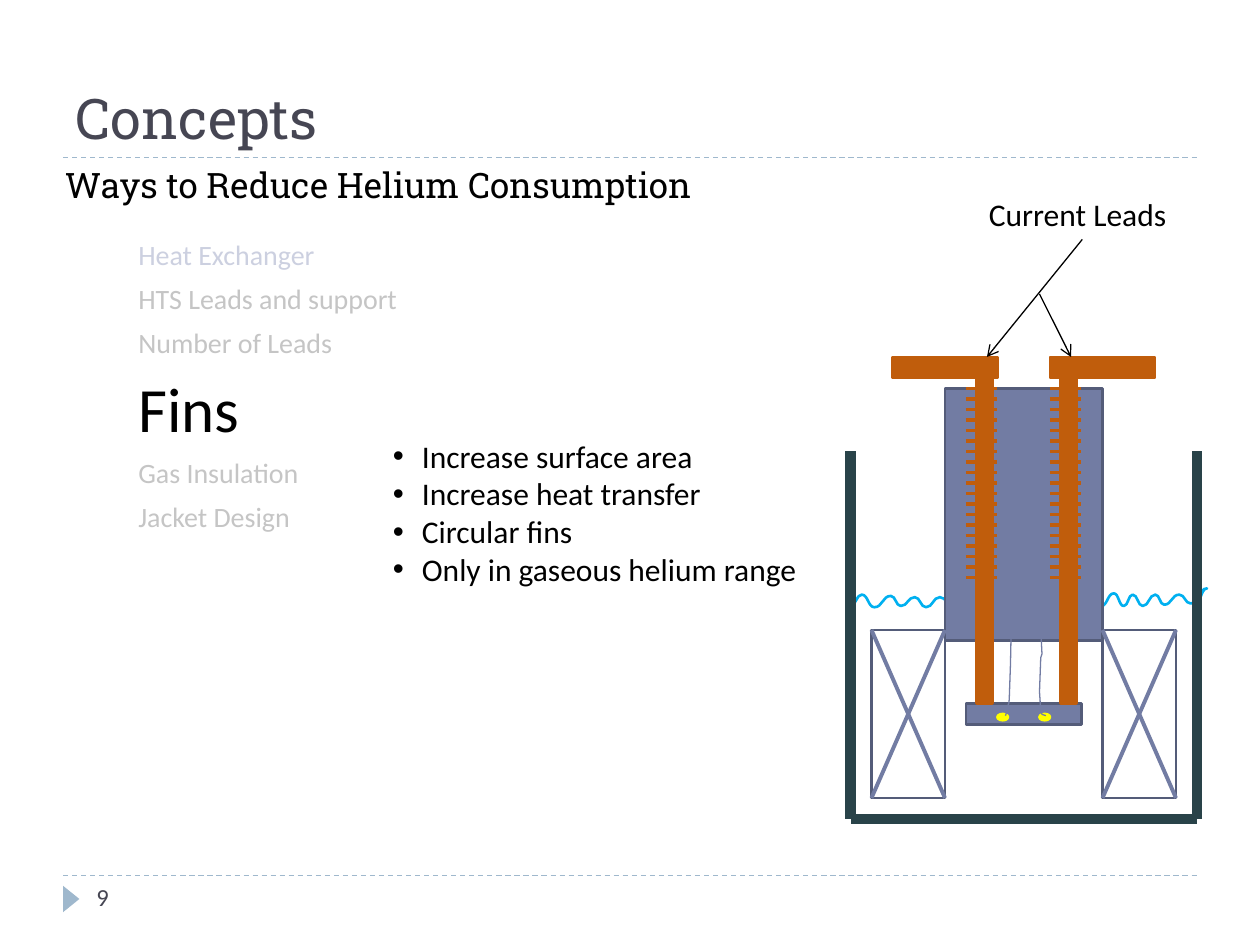
from lxml.etree import SubElement
from pptx import Presentation
from pptx.dml.color import RGBColor
from pptx.enum.dml import MSO_LINE
from pptx.enum.shapes import MSO_CONNECTOR, MSO_SHAPE
from pptx.enum.text import MSO_ANCHOR, PP_ALIGN
from pptx.oxml.ns import qn
from pptx.util import Inches, Pt

SLATE, EDGE, COPPER, WALL = "727CA3", "545C79", "C05D0C", "294349"
BLACK, INK, PALE, FADED, RULE = "000000", "464653", "CCD0E0", "C5C5C5", "9FB8CD"
YELLOW, WATER = "FFFF00", "00B0F0"

CONCEPTS = [
    ("Heat Exchanger", 16, PALE),
    ("HTS Leads and support", 16, FADED),
    ("Number of Leads", 16, FADED),
    ("Fins", 36, BLACK),
    ("Gas Insulation", 16, FADED),
    ("Jacket Design", 16, FADED),
]
FIN_NOTES = [
    "Increase surface area",
    "Increase heat transfer",
    "Circular fins",
    "Only in gaseous helium range",
]
WATER_TURNS = [
    (6.75, 4.81), (6.84, 4.72), (6.94, 4.82), (7.07, 4.73), (7.15, 4.81),
    (7.26, 4.74), (7.35, 4.82), (7.46, 4.74), (7.57, 4.82), (7.65, 4.72),
    (7.77, 4.83), (7.89, 4.7), (7.94, 4.82), (8.05, 4.73), (8.15, 4.82),
    (8.23, 4.71), (8.39, 4.83), (8.49, 4.72), (8.57, 4.81), (8.66, 4.74),
    (8.74, 4.81), (8.84, 4.71), (8.92, 4.81), (8.99, 4.72), (9.07, 4.81),
    (9.17, 4.72), (9.24, 4.8), (9.36, 4.72), (9.45, 4.79), (9.58, 4.67),
    (9.48, 4.8),
]
WIRES = [
    [(7.98, 5.68), (7.99, 5.65), (8.01, 5.55), (8.02, 5.27), (8.03, 4.77),
     (8.01, 4.66), (8.02, 4.23), (8.03, 4.2), (8.02, 4.06), (8.01, 3.84),
     (8, 3.79), (7.98, 3.67)],
    [(8.3, 5.68), (8.27, 5.67), (8.26, 5.64), (8.25, 5.49), (8.26, 5.22),
     (8.27, 5.19), (8.26, 4.99), (8.27, 4.96), (8.27, 4.57), (8.25, 4.3),
     (8.26, 4.14), (8.27, 4.11), (8.25, 3.99), (8.26, 3.67)],
]
MAGNETS = [(6.92, 5, 0.58, 1.33), (8.75, 5, 0.58, 1.33)]
LEAD_CAPS = [(7.08, 2.83, 0.83, 0.17), (8.33, 2.83, 0.83, 0.17)]
LEADS = [(7.75, 7.67), (8.42, 8.33)]
FIN_COUNT, FIN_TOP, FIN_GAP, FIN_WIDTH = 19, 37 / 12, 1 / 12, 0.25
VESSEL = [(6.75, 3.58, 6.75, 6.5), (9.5, 3.58, 9.5, 6.5),
          (6.83, 6.5, 9.5, 6.5), (7, 6.5, 6.75, 6.5)]
ARROWS = [(8.59, 1.9, 7.83, 2.83), (8.25, 2.33, 8.5, 2.83)]


def snap(value):
    twelfth = round(value * 12) / 12
    return Inches(twelfth if abs(twelfth - value) < 0.006 else value)


def rgb(value):
    return RGBColor.from_string(value)


def shape(box, fill, line=None, kind=MSO_SHAPE.RECTANGLE):
    sp = s.shapes.add_shape(kind, *map(snap, box))
    sp.shadow.inherit = False
    sp.fill.solid()
    sp.fill.fore_color.rgb = rgb(fill)
    if line:
        sp.line.color.rgb = rgb(line)
        sp.line.width = Pt(1.5)
    else:
        sp.line.fill.background()
    return sp


def connect(ends, color, width, dash=None, arrow=False):
    c = s.shapes.add_connector(MSO_CONNECTOR.STRAIGHT, *map(snap, ends))
    c.line.color.rgb = rgb(color)
    c.line.width = Pt(width)
    if dash:
        c.line.dash_style = dash
    if arrow:
        SubElement(c.line._get_or_add_ln(), qn("a:tailEnd"), type="arrow")
    SubElement(c._element.spPr, qn("a:effectLst"))


def curve(points, color, width, upright=False):
    scaled = [(Inches(x), Inches(y)) for x, y in points]
    fb = s.shapes.build_freeform(*scaled[0])
    fb.add_line_segments(scaled[1:], close=False)
    sp = fb.convert_to_shape()
    sp.shadow.inherit = False
    sp.fill.background()
    sp.line.color.rgb = rgb(color)
    sp.line.width = Pt(width)
    path = sp._element.find(".//" + qn("a:path"))
    ends = [(int(pt.get("x")), int(pt.get("y"))) for pt in path.iter(qn("a:pt"))]
    for segment in path.findall(qn("a:lnTo")):
        path.remove(segment)
    for (x0, y0), (x1, y1) in zip(ends, ends[1:]):
        xm, ym = (x0 + x1) // 2, (y0 + y1) // 2
        bends = [(x0, ym), (x1, ym)] if upright else [(xm, y0), (xm, y1)]
        bezier = SubElement(path, qn("a:cubicBezTo"))
        for x, y in bends + [(x1, y1)]:
            SubElement(bezier, qn("a:pt"), x=str(x), y=str(y))


def write(tf, lines, font="Calibri", indent=None, before=0, bullet=None, wrap=True):
    tf.word_wrap = wrap
    for i, (text, size, color) in enumerate(lines):
        p = tf.paragraphs[0] if i == 0 else tf.add_paragraph()
        p.alignment = PP_ALIGN.LEFT
        p.space_before = Pt(before)
        pPr = p._p.get_or_add_pPr()
        if indent:
            pPr.set("marL", str(Inches(indent[0])))
            pPr.set("indent", str(Inches(indent[1])))
        if bullet:
            p.level = 1
            SubElement(pPr, qn("a:buFont"), typeface="Arial")
            SubElement(pPr, qn("a:buChar"), char=bullet)
        r = p.add_run()
        r.text = text
        for name, value in {"name": font, "size": Pt(size)}.items():
            setattr(r.font, name, value)
        r.font.color.rgb = rgb(color)


def textbox(box, lines, **style):
    write(s.shapes.add_textbox(*map(snap, box)).text_frame, lines, **style)


prs = Presentation()
prs.slide_width, prs.slide_height = Inches(10), Inches(7.5)
s = prs.slides.add_slide(prs.slide_layouts[5])

title = s.shapes.title
for name, value in {"left": 0.5, "top": 0.17, "width": 9, "height": 1.08}.items():
    setattr(title, name, snap(value))
title.text_frame.vertical_anchor = MSO_ANCHOR.BOTTOM
write(title.text_frame, [("Concepts", 32, INK)], font="Roboto Slab")

for y in (6.95, 1.25):
    connect((0.5, y, 9.5, y), RULE, 0.75, dash=MSO_LINE.DASH)
shape((0.46, 7.07, 0.21, 0.13), RULE, kind=MSO_SHAPE.ISOSCELES_TRIANGLE).rotation = 90
textbox((0.67, 6.95, 2.17, 0.4), [("9", 14, INK)])

curve(WATER_TURNS, WATER, 1.5)
shape((7.5, 3.08, 1.25, 2), SLATE, EDGE)
textbox((1, 1.83, 9, 4.95), CONCEPTS, indent=(0.3, -0.3), before=6)

for cap in LEAD_CAPS:
    shape(cap, COPPER, COPPER)
shape((7.67, 5.58, 0.92, 0.17), SLATE, EDGE)
for x in (7.92, 8.25):
    shape((x, 5.67, 0.08, 0.05), YELLOW, YELLOW, MSO_SHAPE.OVAL)
for wire in WIRES:
    curve(wire, SLATE, 0.75, upright=True)

for ends in VESSEL:
    connect(ends, WALL, 6)
for x, y, w, h in MAGNETS:
    shape((x, y, w, h), "FFFFFF", EDGE)
    connect((x, y, x + w, y + h), SLATE, 2.25)
    connect((x, y + h, x + w, y), SLATE, 2.25)

textbox((0.42, 1.25, 6.75, 0.44), [("Ways to Reduce Helium Consumption", 20, BLACK)],
        font="Roboto Slab")
textbox((2.75, 3.42, 3.75, 2.83), [(note, 18, BLACK) for note in FIN_NOTES],
        indent=(0.5, -0.23), bullet="•")
textbox((7.75, 1.5, 1.68, 0.4), [("Current Leads", 18, BLACK)], wrap=False)
for ends in ARROWS:
    connect(ends, BLACK, 0.75, arrow=True)

for lead_left, fin_left in LEADS:
    shape((lead_left, 3, 0.13, 2.58), COPPER, COPPER)
    for i in range(FIN_COUNT):
        y = FIN_TOP + i * FIN_GAP
        connect((fin_left, y, fin_left + FIN_WIDTH, y), COPPER, 2.25)

prs.save("out.pptx")
